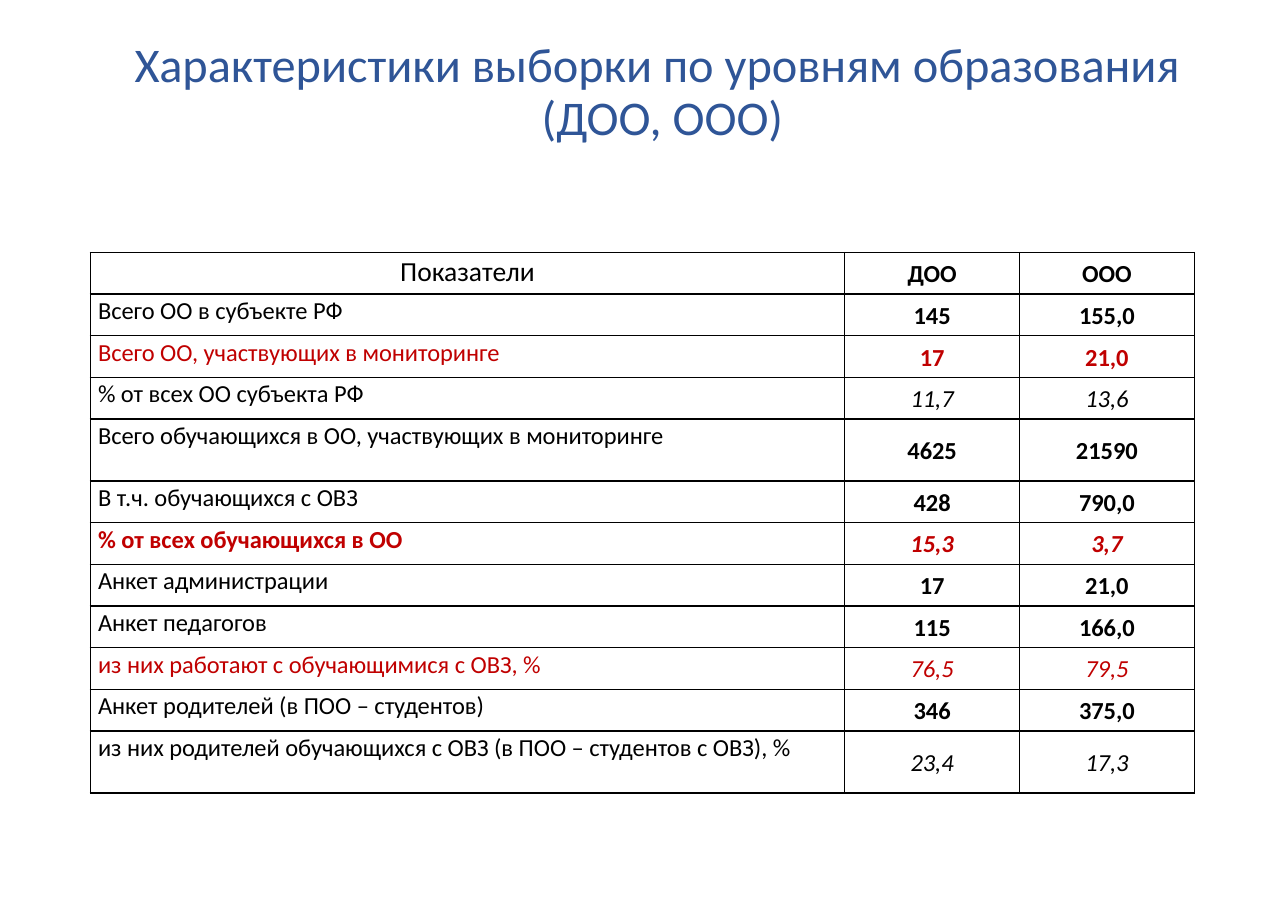
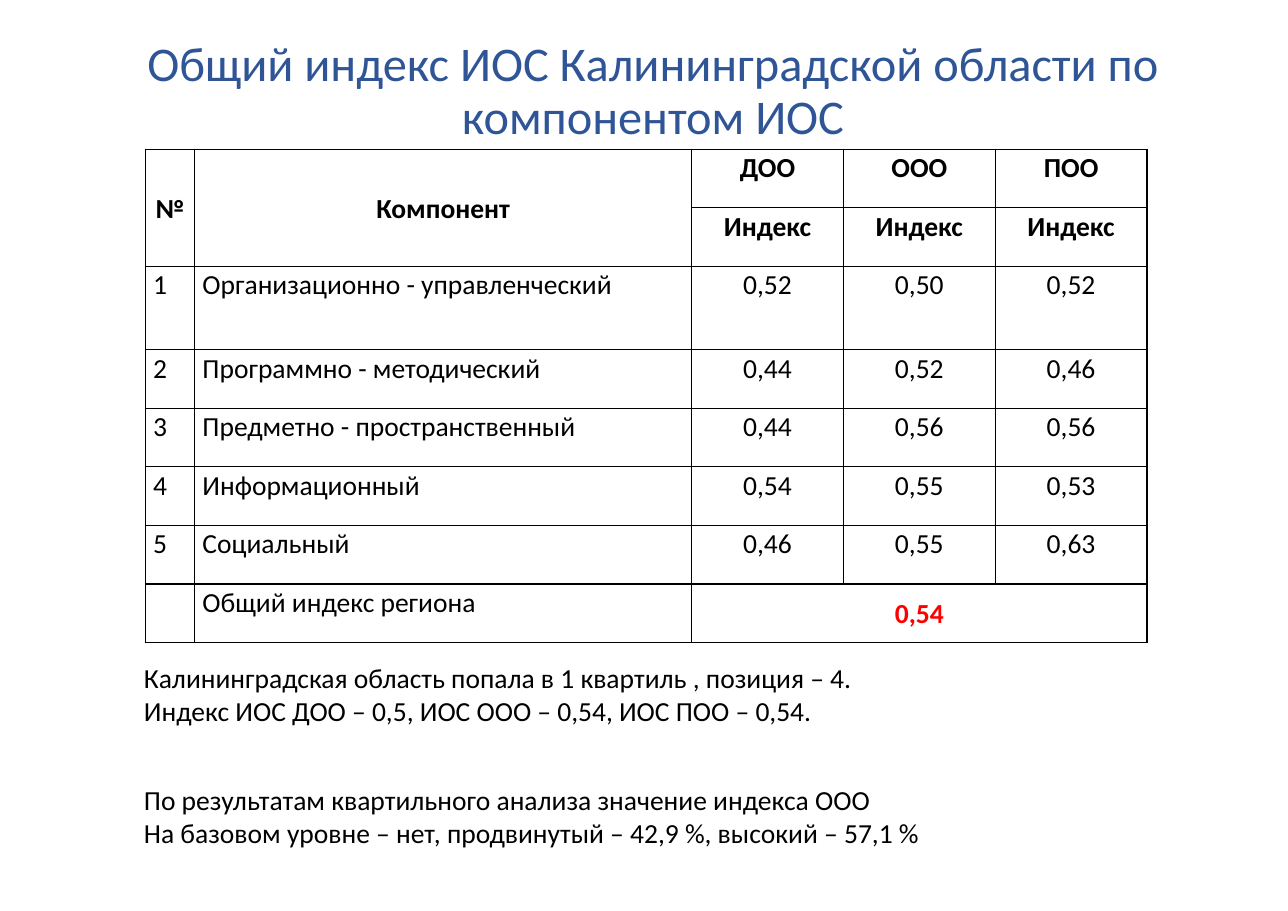
import pptx
import pptx.util
import pptx.dml.color
import pptx.enum.text
import pptx.oxml

Cm = pptx.util.Cm
Pt = pptx.util.Pt
Align = pptx.enum.text.PP_ALIGN
Anchor = pptx.enum.text.MSO_ANCHOR
BLUE, BLACK, DARK, RED = "2F5597", "000000", "C00000", "FF0000"
NS = "http://schemas.openxmlformats.org/drawingml/2006/main"


def tint(code):
    return pptx.dml.color.RGBColor.from_string(code)


def write(frame, text, align, space, size, color=BLACK, **style):
    frame.text = text
    look = {"name": "Calibri", "size": Pt(size), **style}
    for para in frame.paragraphs:
        para.alignment = align
        para.line_spacing = space
        for run in para.runs:
            run.font.color.rgb = tint(color)
            for key, value in look.items():
                setattr(run.font, key, value)


counts = [
    ("Всего ОО в субъекте РФ", "145", "155,0"),
    ("Всего ОО, участвующих в мониторинге", "17", "21,0"),
    ("% от всех ОО субъекта РФ", "11,7", "13,6"),
    ("Всего обучающихся в ОО, участвующих в мониторинге", "4625", "21590"),
    ("В т.ч. обучающихся с ОВЗ", "428", "790,0"),
    ("% от всех обучающихся в ОО", "15,3", "3,7"),
    ("Анкет администрации", "17", "21,0"),
    ("Анкет педагогов", "115", "166,0"),
    ("из них работают с обучающимися с ОВЗ, %", "76,5", "79,5"),
    ("Анкет родителей (в ПОО – студентов)", "346", "375,0"),
    ("из них родителей обучающихся с ОВЗ (в ПОО – студентов с ОВЗ), %", "23,4", "17,3"),
]
parts = [
    ("Организационно - управленческий", "0,52", "0,50", "0,52"),
    ("Программно - методический", "0,44", "0,52", "0,46"),
    ("Предметно - пространственный", "0,44", "0,56", "0,56"),
    ("Информационный", "0,54", "0,55", "0,53"),
    ("Социальный", "0,46", "0,55", "0,63"),
]

plain = {"size": 18}
bold = {"size": 18, "bold": True}
head = {"size": 16, "bold": True}

sample = [[("Показатели", Align.CENTER, Anchor.TOP, plain)]
          + [(name, Align.CENTER, Anchor.MIDDLE, head) for name in ("ДОО", "ООО")]]
for row, (label, *values) in enumerate(counts, 1):
    share = "%" in label
    main = row == 6
    base = {"size": 16, "color": DARK if row in (2, 6, 9) else BLACK}
    figure = {**base, "bold": main or not share, "italic": share}
    sample.append([(label, Align.JUSTIFY, Anchor.TOP, {**base, "bold": main})]
                  + [(value, Align.CENTER, Anchor.MIDDLE, figure) for value in values])

blank = ("", Align.LEFT, Anchor.TOP, plain)
index = [
    [(name, Align.CENTER, Anchor.MIDDLE, bold) for name in ("№", "Компонент")]
    + [(name, Align.CENTER, Anchor.TOP, bold) for name in ("ДОО", "ООО", "ПОО")],
    [blank] * 2 + [("Индекс", Align.CENTER, Anchor.TOP, bold)] * 3,
]
for row, (label, *values) in enumerate(parts, 1):
    index.append([(str(row), Align.LEFT, Anchor.TOP, plain),
                  (label, Align.JUSTIFY, Anchor.TOP, plain)]
                 + [(value, Align.CENTER, Anchor.TOP, plain) for value in values])
index.append([blank, ("Общий индекс региона", Align.JUSTIFY, Anchor.TOP, plain),
              ("0,54", Align.CENTER, Anchor.MIDDLE, {**bold, "color": RED}),
              blank, blank])

deck = [
    {"title": "Характеристики выборки по уровням образования\v (ДОО, ООО)",
     "box": (0.61, 0.74, 29.08, 2.74), "at": (2.08, 5.82), "grid": sample,
     "cols": [17.4, 4.03, 4.03], "step": 0.96, "tall": {4: 1.43, 11: 1.43},
     "spans": [], "notes": []},
    {"title": "Общий индекс ИОС Калининградской области по компонентом ИОС",
     "box": (0.41, 0.46, 29.29, 3), "at": (3.35, 3.44), "grid": index,
     "cols": [1.14, 11.46, 3.5, 3.5, 3.5], "step": 1.35, "tall": {2: 1.92},
     "spans": [(0, 0, 1, 0), (0, 1, 1, 1), (7, 2, 7, 4)],
     "notes": [
         (15.11, "Калининградская область попала в 1 квартиль , позиция – 4.\n"
                 "Индекс ИОС ДОО – 0,5, ИОС ООО – 0,54, ИОС ПОО – 0,54."),
         (17.93, "По результатам квартильного анализа значение индекса ООО\n"
                 "На базовом уровне – нет, продвинутый – 42,9 %, высокий – 57,1 %"),
     ]},
]

prs = pptx.Presentation()
prs.slide_width, prs.slide_height = Cm(29.7), Cm(21)

for page in deck:
    slide = prs.slides.add_slide(prs.slide_layouts[6])
    frame = slide.shapes.add_textbox(*map(Cm, page["box"])).text_frame
    frame.word_wrap = True
    frame.vertical_anchor = Anchor.BOTTOM
    write(frame, page["title"], Align.CENTER, 0.9, 31.6, BLUE)

    grid, cols = page["grid"], page["cols"]
    rows = [page["tall"].get(row, page["step"]) for row in range(len(grid))]
    table = slide.shapes.add_table(len(rows), len(cols), *map(Cm, page["at"]),
                                   Cm(sum(cols)), Cm(sum(rows))).table
    table.first_row = table.horz_banding = False
    for col, width in zip(table.columns, cols):
        col.width = Cm(width)
    for row, height in zip(table.rows, rows):
        row.height = Cm(height)
    for row, line in enumerate(grid):
        for col, (text, align, anchor, look) in enumerate(line):
            cell = table.cell(row, col)
            write(cell.text_frame, text, align, 1.07, **look)
            form = {"vertical_anchor": anchor, "margin_left": Cm(0.18),
                    "margin_right": Cm(0.18), "margin_top": 0, "margin_bottom": 0}
            for key, value in form.items():
                setattr(cell, key, value)
            props = cell._tc.get_or_add_tcPr()
            for side in "LRTB":
                props.append(pptx.oxml.parse_xml(
                    f'<a:ln{side} xmlns:a="{NS}" w="12700"><a:solidFill>'
                    f'<a:srgbClr val="{BLACK}"/></a:solidFill></a:ln{side}>'))
            cell.fill.background()
    for top, left, bottom, right in page["spans"]:
        table.cell(top, left).merge(table.cell(bottom, right))

    for top, text in page["notes"]:
        frame = slide.shapes.add_textbox(Cm(3.07), Cm(top), Cm(25.8), Cm(1.8)).text_frame
        frame.word_wrap = True
        write(frame, text, Align.LEFT, 1.0, 18)

prs.save("out.pptx")
